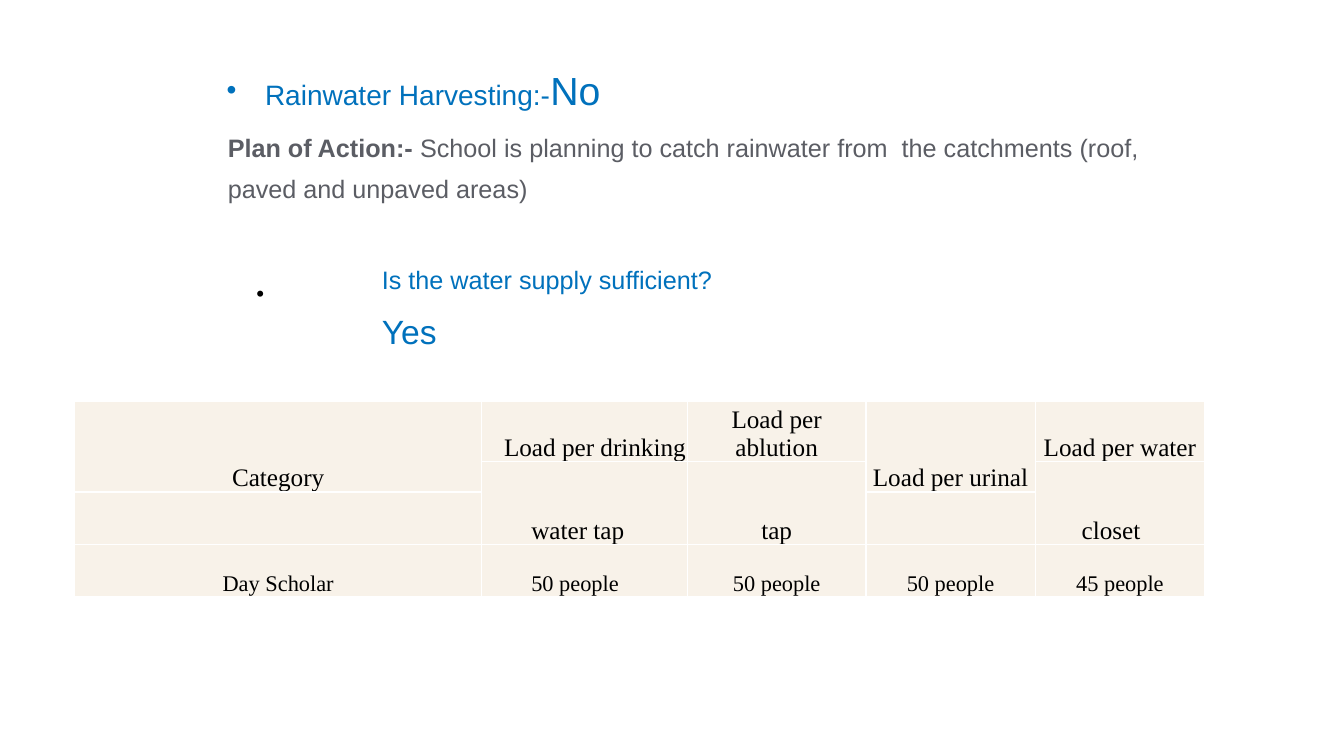
from dataclasses import dataclass

import lxml.etree
import pptx
import pptx.dml.color
import pptx.enum.text
import pptx.oxml.ns
import pptx.util


@dataclass(frozen=True)
class Theme:
    sans: str = "Arial"
    serif: str = "Times New Roman"
    blue: str = "0071BC"
    grey: str = "5B5D64"
    black: str = "000000"
    white: str = "FFFFFF"
    cream: str = "F8F2E9"
    answer: float = 28
    reply: float = 24
    heading: float = 20
    body: float = 18
    data: float = 16
    border: float = 1


@dataclass(frozen=True)
class Run:
    text: str
    size: float
    color: str
    font: str
    bold: bool = False


@dataclass(frozen=True)
class Para:
    runs: tuple[Run, ...]
    margin: float = 0
    hanging: float = 0
    bullet: str = ""
    before: float = 0
    line: float = 0


@dataclass(frozen=True)
class Block:
    left: float
    top: float
    width: float
    height: float
    paras: tuple[Para, ...]
    inset: bool = True


@dataclass(frozen=True)
class Entry:
    row: int
    col: int
    text: str
    size: float
    margin: float = 0
    last_row: int = 0


THEME = Theme()
WIDTH = pptx.util.Inches(13.33)
HEIGHT = pptx.util.Inches(7.5)

BLOCKS = (
    Block(5.03, 8.13, 85, 20, (
        Para((Run("Rainwater Harvesting:-", THEME.heading, THEME.blue, THEME.sans),
              Run("No", THEME.answer, THEME.blue, THEME.sans)),
             margin=13.95, hanging=-2.85, bullet="•"),
        Para((Run("Plan of Action:- ", THEME.body, THEME.grey, THEME.sans, True),
              Run("School is planning to catch rainwater from  the catchments "
                  "(roof, paved and unpaved areas)",
                  THEME.body, THEME.grey, THEME.sans)),
             margin=11.18, before=5.5, line=29.3),
    )),
    Block(19.05, 36.67, 1.5, 4, (
        Para((Run("•", THEME.body, THEME.black, THEME.serif),)),
    ), inset=False),
    Block(18.3, 34.27, 64.21, 12.27, (
        Para((Run("Is the water supply sufficient?", THEME.body, THEME.blue, THEME.sans),),
             margin=9.38),
        Para((Run("Yes", THEME.reply, THEME.blue, THEME.sans),),
             margin=9.38, before=11.8),
    )),
)

TABLE_LEFT, TABLE_TOP = 5.55, 53.07
COLUMNS = (30.3, 15.3, 13.28, 12.6, 12.6)
ROWS = (7.87, 4, 6.93, 6.93)
ENTRIES = (
    Entry(0, 0, "Category", THEME.body, last_row=1),
    Entry(0, 1, "Load per drinking", THEME.body, margin=1.65),
    Entry(0, 2, "Load per ablution", THEME.body),
    Entry(0, 3, "Load per urinal", THEME.body, last_row=1),
    Entry(0, 4, "Load per water", THEME.body),
    Entry(1, 1, "water tap", THEME.body, margin=3.68, last_row=2),
    Entry(1, 2, "tap", THEME.body, last_row=2),
    Entry(1, 4, "closet", THEME.body, margin=3.45, last_row=2),
    Entry(3, 0, "Day Scholar", THEME.data),
    Entry(3, 1, "50 people", THEME.data, margin=3.68),
    Entry(3, 2, "50 people", THEME.data),
    Entry(3, 3, "50 people", THEME.data),
    Entry(3, 4, "45 people", THEME.data),
)


def across(percent: float) -> int:
    return round(WIDTH * percent / 100)


def down(percent: float) -> int:
    return round(HEIGHT * percent / 100)


def rgb(color: str) -> pptx.dml.color.RGBColor:
    return pptx.dml.color.RGBColor.from_string(color)


def add_xml(parent, tag: str, **attributes: str):
    return lxml.etree.SubElement(parent, pptx.oxml.ns.qn(tag), attributes)


def style_run(r, size: float, color: str, font: str, bold: bool = False) -> None:
    r.font.size = pptx.util.Pt(size)
    r.font.color.rgb = rgb(color)
    r.font.name = font
    r.font.bold = bold


def write_para(p, para: Para) -> None:
    pPr = p._p.get_or_add_pPr()
    pPr.set("marL", str(across(para.margin)))
    pPr.set("indent", str(across(para.hanging)))
    if para.bullet:
        add_xml(pPr, "a:buFont", typeface=THEME.sans)
        add_xml(pPr, "a:buChar", char=para.bullet)
    if para.before:
        p.space_before = pptx.util.Pt(para.before)
    if para.line:
        p.line_spacing = pptx.util.Pt(para.line)
    for run in para.runs:
        r = p.add_run()
        r.text = run.text
        style_run(r, run.size, run.color, run.font, run.bold)


def draw_block(s, block: Block) -> None:
    sp = s.shapes.add_textbox(across(block.left), down(block.top),
                              across(block.width), down(block.height))
    tf = sp.text_frame
    tf.word_wrap = True
    if not block.inset:
        tf.margin_left = tf.margin_right = tf.margin_top = tf.margin_bottom = 0
    for i, para in enumerate(block.paras):
        write_para(tf.add_paragraph() if i else tf.paragraphs[0], para)


def style_cell(cell) -> None:
    cell.margin_left = cell.margin_right = cell.margin_top = cell.margin_bottom = 0
    cell.vertical_anchor = pptx.enum.text.MSO_ANCHOR.BOTTOM
    tcPr = cell._tc.get_or_add_tcPr()
    for edge in ("a:lnL", "a:lnR", "a:lnT", "a:lnB"):
        ln = add_xml(tcPr, edge, w=str(pptx.util.Pt(THEME.border)))
        add_xml(add_xml(ln, "a:solidFill"), "a:srgbClr", val=THEME.white)
    cell.fill.solid()
    cell.fill.fore_color.rgb = rgb(THEME.cream)


def write_entry(table, entry: Entry) -> None:
    cell = table.cell(entry.row, entry.col)
    if entry.last_row:
        cell.merge(table.cell(entry.last_row, entry.col))
    cell.text_frame.text = entry.text
    p = cell.text_frame.paragraphs[0]
    if entry.margin:
        p._p.get_or_add_pPr().set("marL", str(across(entry.margin)))
    else:
        p.alignment = pptx.enum.text.PP_ALIGN.CENTER
    style_run(p.runs[0], entry.size, THEME.black, THEME.serif)


def draw_table(s) -> None:
    table = s.shapes.add_table(len(ROWS), len(COLUMNS), across(TABLE_LEFT), down(TABLE_TOP),
                               across(sum(COLUMNS)), down(sum(ROWS))).table
    table.first_row = table.horz_banding = False
    for column, width in zip(table.columns, COLUMNS):
        column.width = across(width)
    for row, height in zip(table.rows, ROWS):
        row.height = down(height)
    for cell in table.iter_cells():
        style_cell(cell)
    for entry in ENTRIES:
        write_entry(table, entry)


def main() -> None:
    prs = pptx.Presentation()
    prs.slide_width, prs.slide_height = WIDTH, HEIGHT
    s = prs.slides.add_slide(prs.slide_layouts[6])
    for block in BLOCKS:
        draw_block(s, block)
    draw_table(s)
    prs.save("out.pptx")


if __name__ == "__main__":
    main()
